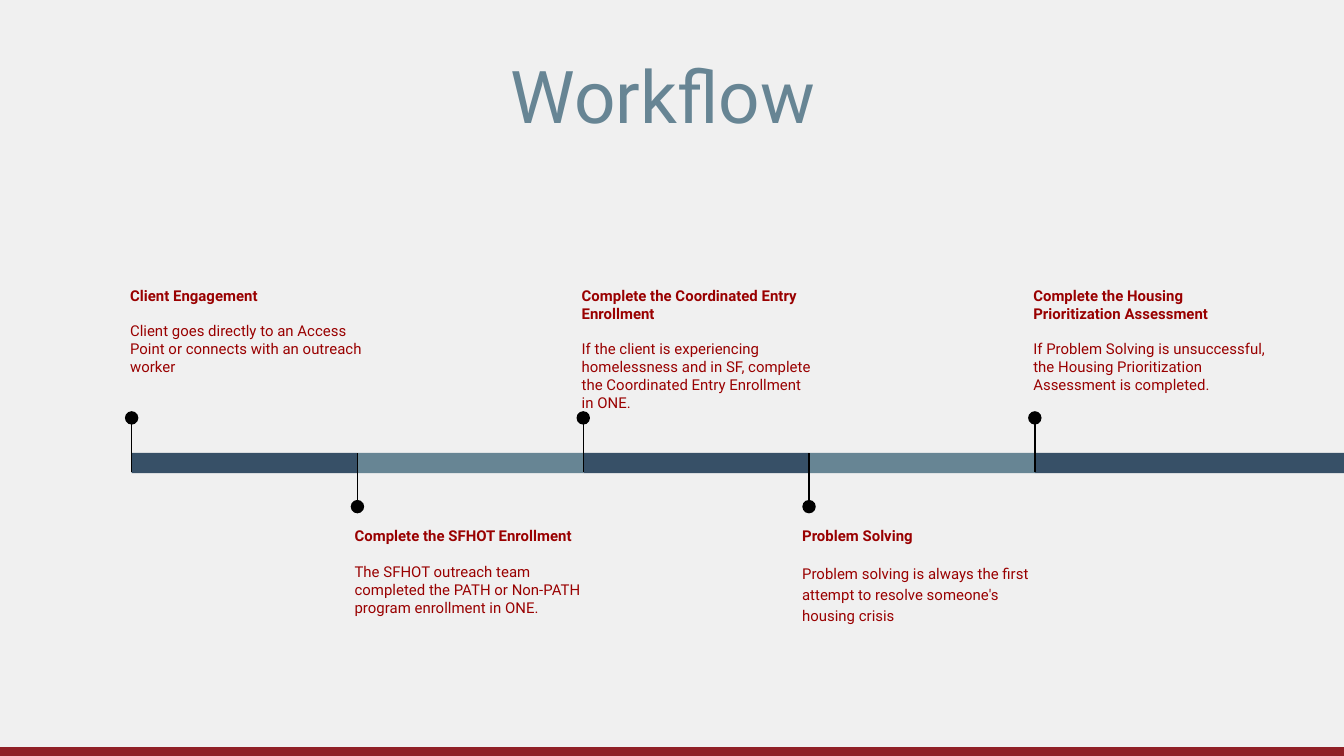
from pptx import Presentation
from pptx import util as u
from pptx.dml.color import RGBColor
from pptx.enum import shapes, text
from pptx.oxml.ns import qn
from lxml import etree

FONT = "Roboto"
PAPER = RGBColor(0xF0, 0xF0, 0xF0)
NAVY = RGBColor(0x37, 0x50, 0x67)
STEEL = RGBColor(0x67, 0x85, 0x94)
MAROON = RGBColor(0x90, 0x20, 0x27)
RED = RGBColor(0x99, 0x00, 0x00)
BLACK = RGBColor(0, 0, 0)

# Widescreen, 16:9
SLIDE_W = 10
SLIDE_H = SLIDE_W * 9 / 16
START, STEP = 0.98, 1.68
BAR_TOP, BAR_H = 3.37, 0.15
DOT = 0.1

# Caption left, heading, description, line spacing of the description
STEPS = [
    (0.87, "Client Engagement",
     "Client goes directly to an Access Point or connects with an outreach worker", 1),
    (2.54, "Complete the SFHOT Enrollment",
     "The SFHOT outreach team completed the PATH or Non-PATH program enrollment in ONE.", 1),
    (4.23, "Complete the Coordinated Entry Enrollment",
     "If the client is experiencing homelessness and in SF, complete the "
     "Coordinated Entry Enrollment in ONE.", 1),
    (5.87, "Problem Solving",
     "Problem solving is always the first attempt to resolve someone's housing crisis", 1.15),
    (7.59, "Complete the Housing Prioritization Assessment",
     "If Problem Solving is unsuccessful, the Housing Prioritization Assessment is completed.", 1),
]


def add_filled(parent, kind, left, top, width, height, color):
    shape = parent.add_shape(kind, u.Inches(left), u.Inches(top),
                             u.Inches(width), u.Inches(height))
    shape.shadow.inherit = False
    shape.fill.solid()
    shape.fill.fore_color.rgb = color
    shape.line.fill.background()


def add_stem(parent, x, start, end):
    stem = parent.add_connector(shapes.MSO_CONNECTOR.STRAIGHT, u.Inches(x),
                                u.Inches(start), u.Inches(x), u.Inches(end))
    stem.line.color.rgb = BLACK
    stem.line.width = u.Pt(0.75)
    etree.SubElement(stem._element.spPr, qn("a:effectLst"))


def add_run(paragraph, words, size, color, bold=False):
    run = paragraph.add_run()
    run.text = words
    run.font.name = FONT
    run.font.size = u.Pt(size)
    run.font.bold = bold
    run.font.color.rgb = color


def set_margins(frame, inches):
    frame.margin_left = frame.margin_right = u.Inches(inches)
    frame.margin_top = frame.margin_bottom = u.Inches(inches)


def add_caption(parent, left, top, heading, description, spacing):
    caption = parent.add_textbox(u.Inches(left), u.Inches(top),
                                 u.Inches(1.94), u.Inches(1.03))
    frame = caption.text_frame
    frame.word_wrap = True
    set_margins(frame, 0.1)
    add_run(frame.paragraphs[0], heading, 8, RED, bold=True)
    body = frame.add_paragraph()
    body.space_before = u.Pt(9.5)
    body.line_spacing = spacing
    add_run(body, description, 8, RED)


def add_step(slide, index, left, heading, description, spacing):
    group = slide.shapes.add_group_shape().shapes
    x = START + STEP * index
    above = index % 2 == 0
    width = SLIDE_W - x if index == len(STEPS) - 1 else STEP
    add_filled(group, shapes.MSO_SHAPE.RECTANGLE, x, BAR_TOP, width, BAR_H,
               NAVY if above else STEEL)
    if above:
        add_stem(group, x, 3.12, 3.51)
    else:
        add_stem(group, x, 3.76, BAR_TOP)
    add_filled(group, shapes.MSO_SHAPE.OVAL, x - DOT / 2,
               3.06 if above else 3.72, DOT, DOT, BLACK)
    add_caption(group, left, 2.03 if above else 3.82, heading, description, spacing)


def set_title(slide, words):
    title = slide.shapes.title
    title.left, title.top = u.Inches(0.5), u.Inches(0.23)
    title.width, title.height = u.Inches(9), u.Inches(0.94)
    frame = title.text_frame
    frame.vertical_anchor = text.MSO_ANCHOR.MIDDLE
    set_margins(frame, 0.06)
    frame.paragraphs[0].alignment = text.PP_ALIGN.CENTER
    add_run(frame.paragraphs[0], words, 39, STEEL)


def main():
    deck = Presentation()
    deck.slide_width, deck.slide_height = u.Inches(SLIDE_W), u.Inches(SLIDE_H)
    slide = deck.slides.add_slide(deck.slide_layouts[5])
    slide.background.fill.solid()
    slide.background.fill.fore_color.rgb = PAPER

    # Footer band
    add_filled(slide.shapes, shapes.MSO_SHAPE.RECTANGLE,
               0, 5.56, SLIDE_W, SLIDE_H - 5.56, MAROON)

    # Timeline, captions alternating above and below
    for index, step in enumerate(STEPS):
        add_step(slide, index, *step)

    set_title(slide, "Workflow ")
    deck.save("out.pptx")


if __name__ == "__main__":
    main()
